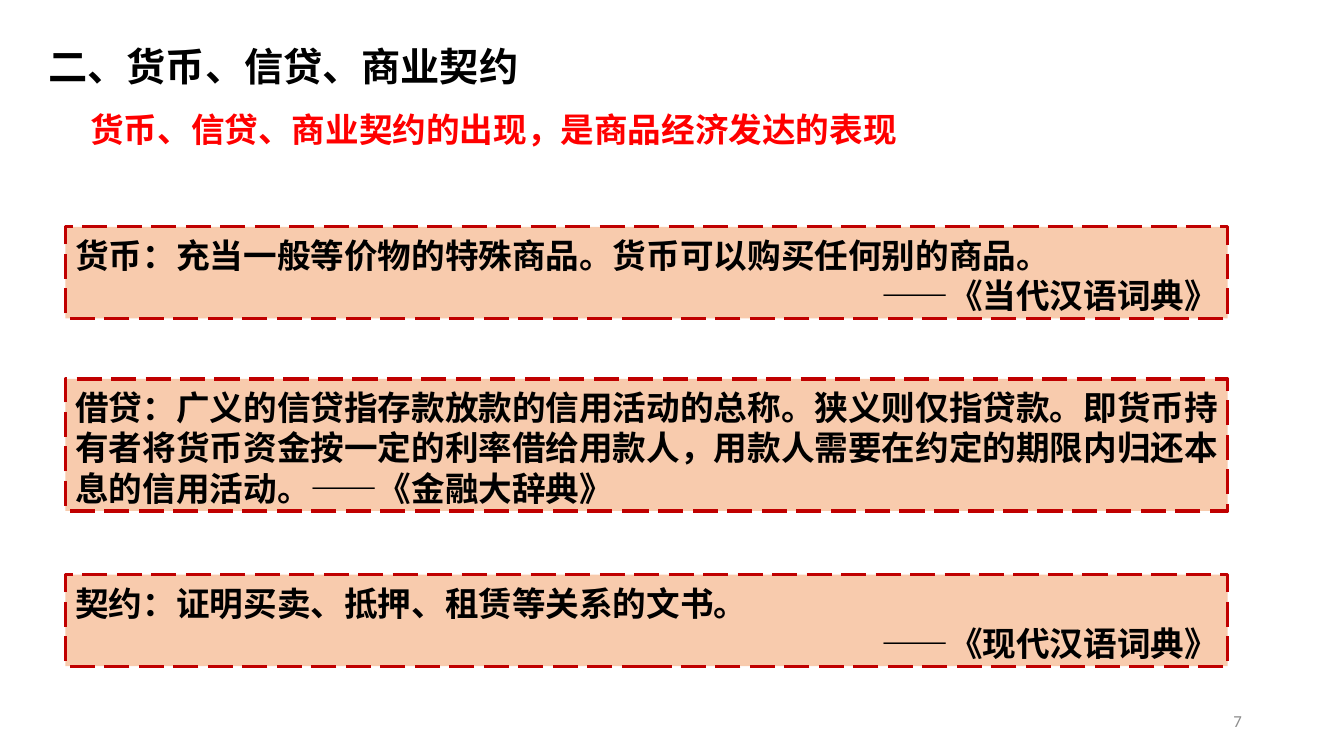
from lxml import etree
from pptx import Presentation
from pptx.dml.color import RGBColor
from pptx.enum.dml import MSO_LINE
from pptx.enum.shapes import MSO_SHAPE
from pptx.enum.text import MSO_ANCHOR, MSO_AUTO_SIZE, PP_ALIGN
from pptx.oxml.ns import qn
from pptx.util import Pt

LEFT, RIGHT = PP_ALIGN.LEFT, PP_ALIGN.RIGHT
TOP, MIDDLE = MSO_ANCHOR.TOP, MSO_ANCHOR.MIDDLE
LONG_DASH = MSO_LINE.LONG_DASH
RECTANGLE = MSO_SHAPE.RECTANGLE
NO_AUTOFIT = MSO_AUTO_SIZE.NONE
CHINESE_FONT = "Noto Sans CJK SC"
BLACK, RED, DARK_RED, PEACH, GREY = "000000", "FF0000", "C00000", "F8CBAD", "8C8C8C"


def color(hex_value):
    return RGBColor.from_string(hex_value)


def prepare_frame(frame, anchor=TOP, top_inset=3.6):
    frame.word_wrap = True
    frame.auto_size = NO_AUTOFIT
    frame.vertical_anchor = anchor
    frame.margin_left = frame.margin_right = Pt(7.2)
    frame.margin_top, frame.margin_bottom = Pt(top_inset), Pt(3.6)


def write_line(paragraph, text, size, font, hex_value, bold=True, align=LEFT, spacing=None):
    paragraph.alignment = align
    if spacing:
        paragraph.line_spacing = Pt(spacing)
    run = paragraph.add_run()
    run.text = text
    run.font.size, run.font.bold, run.font.name = Pt(size), bold, font
    run.font.color.rgb = color(hex_value)
    east_asian = etree.Element(qn("a:ea"), typeface=CHINESE_FONT)
    run.font._element.find(qn("a:latin")).addnext(east_asian)


def add_heading(slide, left, top, width, height):
    # Section title
    title = slide.shapes.title
    title.left, title.top, title.width, title.height = Pt(left), Pt(top), Pt(width), Pt(height)
    prepare_frame(title.text_frame)
    write_line(title.text_frame.paragraphs[0], "二、货币、信贷、商业契约",
               28, "Arial", BLACK, spacing=48.4)

    # Key statement, indented below the title
    statement = slide.shapes.add_textbox(Pt(left + 30), Pt(top + 60.5), Pt(600), Pt(36))
    prepare_frame(statement.text_frame, top_inset=5.6)
    write_line(statement.text_frame.paragraphs[0],
               "货币、信贷、商业契约的出现，是商品经济发达的表现",
               24, "Calibri", RED, spacing=28.8)


def add_definition(slide, left, top, width, height, definition, source=None):
    panel = slide.shapes.add_shape(RECTANGLE, Pt(left), Pt(top), Pt(width), Pt(height))
    panel.shadow.inherit = False
    panel.fill.solid()
    panel.fill.fore_color.rgb = color(PEACH)
    panel.line.color.rgb = color(DARK_RED)
    panel.line.width = Pt(2.25)
    panel.line.dash_style = LONG_DASH

    frame = panel.text_frame
    prepare_frame(frame, top_inset=5.6)
    write_line(frame.paragraphs[0], definition, 24, CHINESE_FONT, BLACK, spacing=28.8)
    if source:
        write_line(frame.add_paragraph(), source, 24, CHINESE_FONT, BLACK,
                   align=RIGHT, spacing=28.8)


def add_page_number(slide, left, top, width, height):
    number = slide.shapes.add_textbox(Pt(left), Pt(top), Pt(width), Pt(height))
    prepare_frame(number.text_frame, anchor=MIDDLE)
    write_line(number.text_frame.paragraphs[0], "7", 12, "Calibri", GREY,
               bold=False, align=RIGHT)


def main():
    deck = Presentation()
    deck.slide_width, deck.slide_height = Pt(960), Pt(540)
    slide = deck.slides.add_slide(deck.slide_layouts[5])

    add_heading(slide, 27.4, 11.5, 388, 50.4)

    # Definitions: top, height, wording, source
    definitions = [
        (162, 65.5, "货币：充当一般等价物的特殊商品。货币可以购买任何别的商品。",
         "——《当代汉语词典》"),
        (270.7, 94.3, "借贷：广义的信贷指存款放款的信用活动的总称。狭义则仅指贷款。"
         "即货币持有者将货币资金按一定的利率借给用款人，用款人需要在约定的期限内"
         "归还本息的信用活动。——《金融大辞典》", None),
        (410.4, 65.5, "契约：证明买卖、抵押、租赁等关系的文书。",
         "——《现代汉语词典》"),
    ]
    for top, height, definition, source in definitions:
        add_definition(slide, 46.8, top, 830.2, height, definition, source)

    add_page_number(slide, 678.2, 500.4, 216, 28.8)
    deck.save("out.pptx")


if __name__ == "__main__":
    main()
